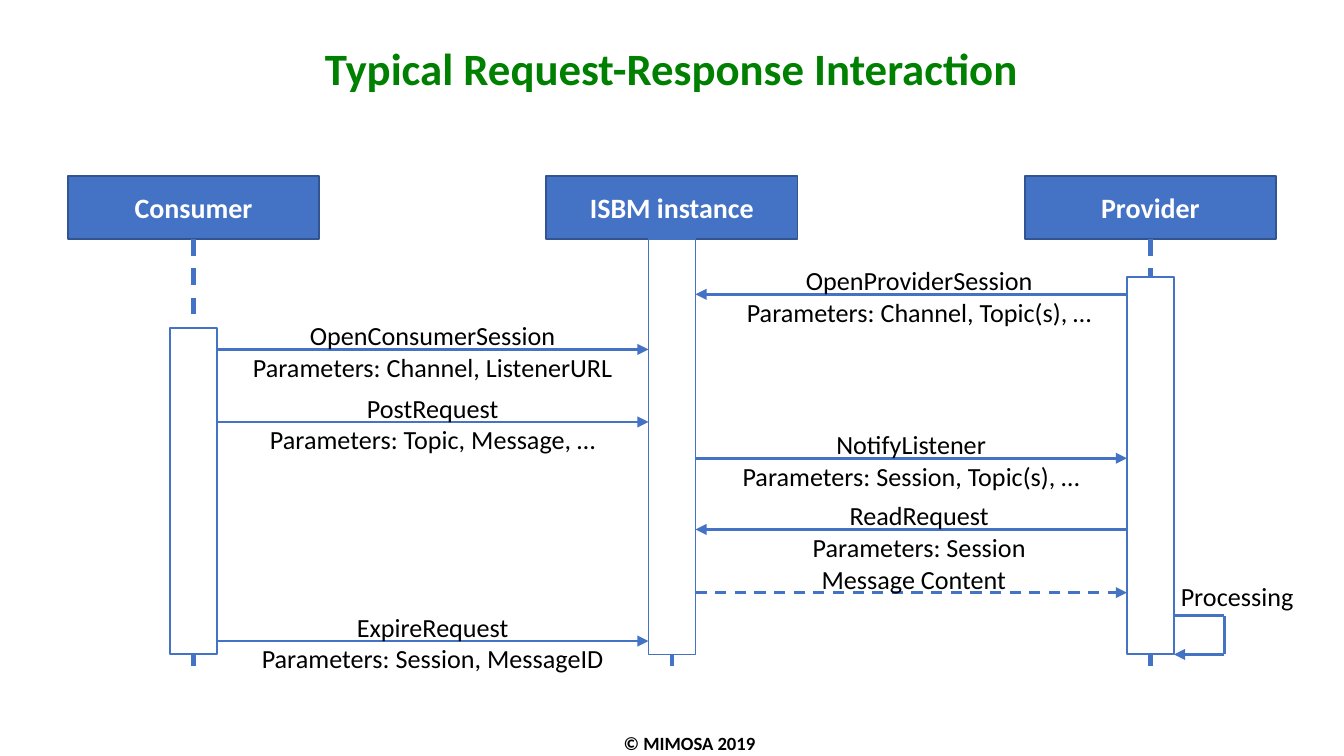
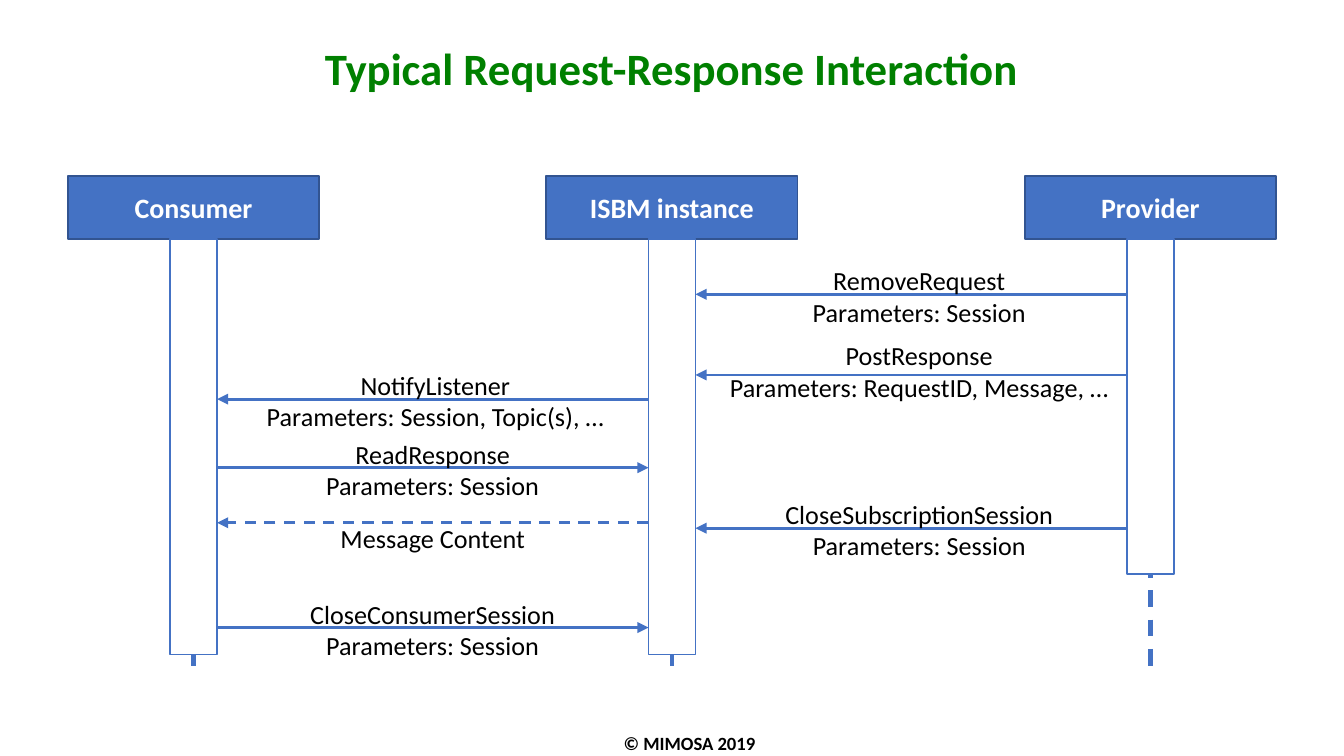
from dataclasses import dataclass

from lxml.etree import SubElement
from pptx import Presentation
from pptx.dml.color import RGBColor
from pptx.enum.dml import MSO_LINE
from pptx.enum.shapes import MSO_CONNECTOR, MSO_SHAPE
from pptx.enum.text import MSO_ANCHOR, MSO_AUTO_SIZE, PP_ALIGN
from pptx.oxml.ns import qn
from pptx.util import Emu, Inches, Pt

SLIDE_WIDTH = Inches(10)
SLIDE_HEIGHT = SLIDE_WIDTH * 9 // 16
CELL = SLIDE_WIDTH // 100

FONT = "Calibri"
BLUE = RGBColor(0x44, 0x72, 0xC4)
NAVY = RGBColor(0x32, 0x54, 0x91)
GREEN = RGBColor(0x00, 0x80, 0x00)
BLACK = RGBColor(0x00, 0x00, 0x00)
WHITE = RGBColor(0xFF, 0xFF, 0xFF)

TITLE = "Typical Request-Response Interaction"
COPYRIGHT = "© MIMOSA 2019"
PARTICIPANTS = ("Consumer", "ISBM instance", "Provider")
CONSUMER, ISBM, PROVIDER = LANES = [50 + 35.6 * step for step in (-1, 0, 1)]

HEAD_TOP, HEAD_WIDTH, HEAD_HEIGHT = 13.1, 18.7, 4.7
HEAD_BOTTOM = HEAD_TOP + HEAD_HEIGHT
LIFELINE_END = 50.2
BAR_WIDTH, BAR_END = 3.5, 48.7
LINE_HEIGHT, PADDING = 2.35, 1


@dataclass
class Message:
    """One arrow between two lanes, with its label."""
    sender: float
    receiver: float
    row: float
    label: str
    width: float
    shift: float = 0
    lift: float = 2.7
    dashed: bool = False


REQUEST_MESSAGES = (
    Message(CONSUMER, ISBM, 26, "OpenConsumerSession\nParameters: Channel, ListenerURL", 29.1),
    Message(PROVIDER, ISBM, 21.9, "OpenProviderSession\nParameters: Channel, Topic(s), …", 27.9, 0.6),
    Message(CONSUMER, ISBM, 31.4, "PostRequest\nParameters: Topic, Message, …", 27.1),
    Message(ISBM, PROVIDER, 34.1, "NotifyListener\nParameters: Session, Topic(s), …", 27.9),
    Message(PROVIDER, ISBM, 39.4, "ReadRequest\nParameters: Session", 18.4, 0.6),
    Message(ISBM, PROVIDER, 44.1, "Message Content", 16.1, 0.2, dashed=True),
    Message(CONSUMER, ISBM, 47.7, "ExpireRequest\nParameters: Session, MessageID", 28.2),
)
RESPONSE_MESSAGES = (
    Message(CONSUMER, ISBM, 34.8, "ReadResponse\nParameters: Session", 18),
    Message(PROVIDER, ISBM, 21.9, "RemoveRequest\nParameters: Session", 18, 0.6),
    Message(PROVIDER, ISBM, 39.3, "CloseSubscriptionSession\nParameters: Session", 22.2, 0.6),
    Message(PROVIDER, ISBM, 27.9, "PostResponse\nParameters: RequestID, Message, …", 30.3, 0.6, 3.1),
    Message(CONSUMER, ISBM, 46.7, "CloseConsumerSession\nParameters: Session", 20.4),
    Message(ISBM, CONSUMER, 29.7, "NotifyListener\nParameters: Session, Topic(s), …", 27.5, 0.2),
    Message(ISBM, CONSUMER, 38.9, "Message Content", 15.9, lift=0.5, dashed=True),
)


def cells(*counts):
    """Turn counts of grid cells into lengths."""
    return [Emu(round(count * CELL)) for count in counts]


def write(frame, text, size, color, bold=False):
    """Write centred text run by run, with breaks between its lines."""
    paragraph = frame.paragraphs[0]
    paragraph.alignment = PP_ALIGN.CENTER
    for index, line in enumerate(text.split("\n")):
        if index:
            paragraph.add_line_break()
        run = paragraph.add_run()
        run.text = line
        run.font.name = FONT
        run.font.size = Pt(size)
        run.font.bold = bold
        run.font.color.rgb = color
    return paragraph


def add_text(slide, box, text, size, color=BLACK, bold=False, wrap=True):
    """Add a text box and return its paragraph."""
    frame = slide.shapes.add_textbox(*cells(*box)).text_frame
    frame.word_wrap = wrap
    frame.auto_size = MSO_AUTO_SIZE.NONE if wrap else MSO_AUTO_SIZE.SHAPE_TO_FIT_TEXT
    return write(frame, text, size, color, bold)


def add_box(slide, lane, top, width, height, fill, outline):
    """Add a rectangle centred on a lane."""
    box = slide.shapes.add_shape(
        MSO_SHAPE.RECTANGLE, *cells(lane - width / 2, top, width, height))
    box.shadow.inherit = False
    box.fill.solid()
    box.fill.fore_color.rgb = fill
    box.line.color.rgb = outline
    box.line.width = Pt(1)
    return box


def add_line(slide, start, end, weight=1.5, dashed=False, arrow=False):
    """Add a straight blue line, dashed or ending in an arrowhead."""
    line = slide.shapes.add_connector(MSO_CONNECTOR.STRAIGHT, *cells(*start, *end))
    line.line.color.rgb = BLUE
    line.line.width = Pt(weight)
    if dashed:
        line.line.dash_style = MSO_LINE.DASH
    properties = line.line._get_or_add_ln()
    if arrow:
        SubElement(properties, qn("a:tailEnd"), type="triangle")
    SubElement(properties.getparent(), qn("a:effectLst"))
    return line


def add_participants(slide, bar_spans):
    """Add the heads, their lifelines and the activation bars."""
    for name, lane in zip(PARTICIPANTS, LANES):
        head = add_box(slide, lane, HEAD_TOP, HEAD_WIDTH, HEAD_HEIGHT, BLUE, NAVY)
        head.text_frame.vertical_anchor = MSO_ANCHOR.MIDDLE
        write(head.text_frame, name, 15, WHITE, bold=True)
        lifeline = add_line(
            slide, (lane, HEAD_BOTTOM), (lane, LIFELINE_END), 2.25, dashed=True)
        lifeline.begin_connect(head, 2)
    for lane, (top, bottom) in zip(LANES, bar_spans):
        add_box(slide, lane, top, BAR_WIDTH, bottom - top, WHITE, BLUE)


def add_message(slide, message):
    """Add an arrow from bar to bar with its label around it."""
    edge = BAR_WIDTH / 2 if message.sender < message.receiver else -BAR_WIDTH / 2
    add_line(slide, (message.sender + edge, message.row),
             (message.receiver - edge, message.row),
             dashed=message.dashed, arrow=True)
    middle = (message.sender + message.receiver) / 2 + message.shift
    height = PADDING + LINE_HEIGHT * len(message.label.split("\n"))
    add_text(slide, (middle - message.width / 2, message.row - message.lift,
                     message.width, height), message.label, 14, wrap=False)


def add_processing_loop(slide):
    """Add the provider's arrow back to itself."""
    side, turn, top = PROVIDER + BAR_WIDTH / 2, 91.1, 45.8
    corners = [(side, top), (turn, top), (turn, BAR_END), (side, BAR_END)]
    for start, end in zip(corners, corners[1:]):
        add_line(slide, start, end, arrow=end == corners[-1])
    add_text(slide, (86.8, 42.7, 10.5, PADDING + LINE_HEIGHT), "Processing", 14, wrap=False)


def add_interaction(deck, bar_spans, messages):
    """Add one sequence slide with title and copyright line."""
    slide = deck.slides.add_slide(deck.slide_layouts[6])
    add_text(slide, (41.7, 54, 19.2, 2.7), COPYRIGHT, 10, bold=True)
    title = add_text(slide, (2.3, 3, 95.3, 5.9), TITLE, 24, GREEN, bold=True)
    title.line_spacing = 0.9
    add_participants(slide, bar_spans)
    for message in messages:
        add_message(slide, message)
    return slide


def main():
    """Build and save the two slides."""
    deck = Presentation()
    deck.slide_width, deck.slide_height = SLIDE_WIDTH, SLIDE_HEIGHT
    full_bar = (HEAD_BOTTOM, BAR_END)
    request = add_interaction(
        deck, ((24.4, BAR_END), full_bar, (20.6, BAR_END)), REQUEST_MESSAGES)
    add_processing_loop(request)
    add_interaction(
        deck, (full_bar, full_bar, (HEAD_BOTTOM, 42.7)), RESPONSE_MESSAGES)
    deck.save("out.pptx")


if __name__ == "__main__":
    main()
